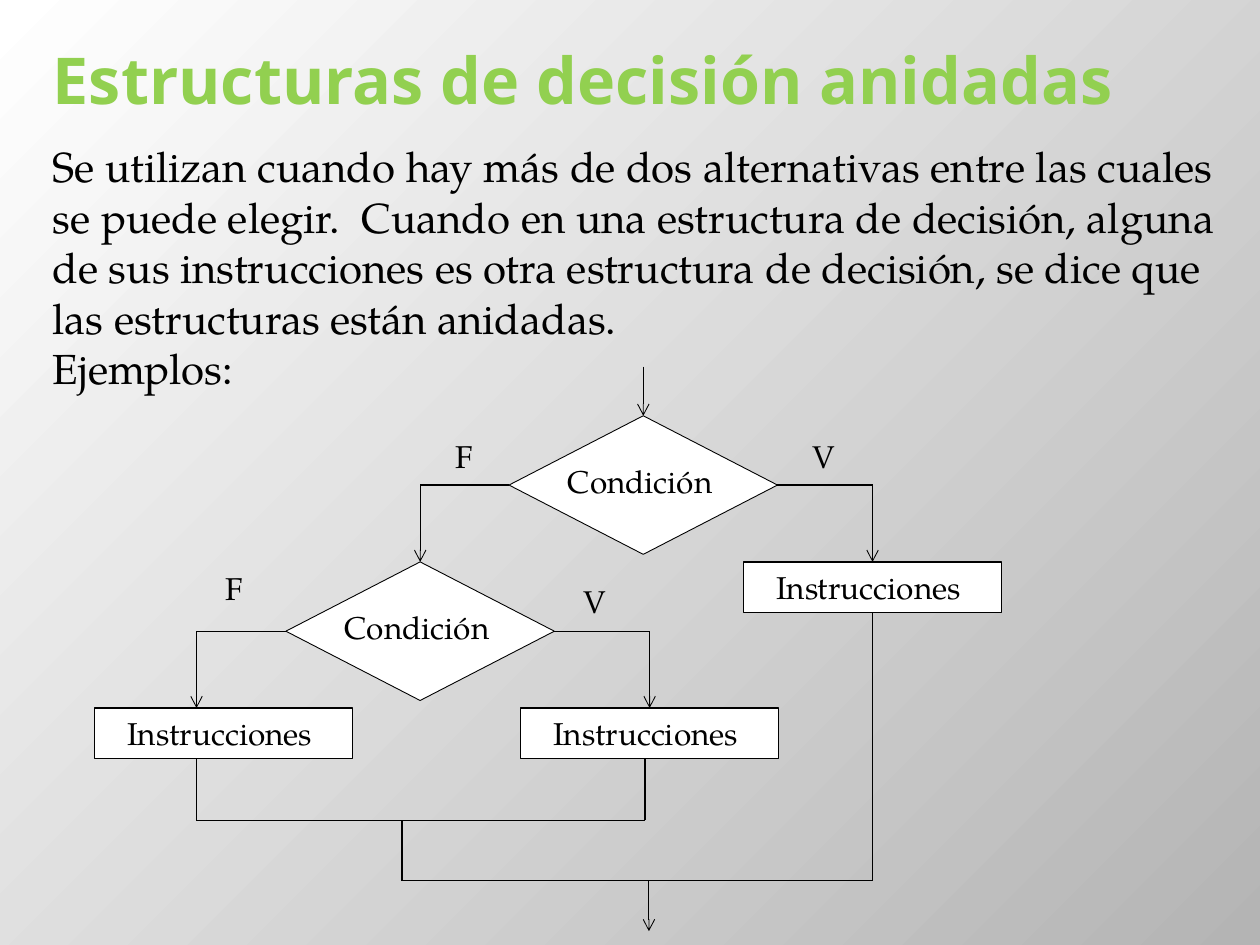
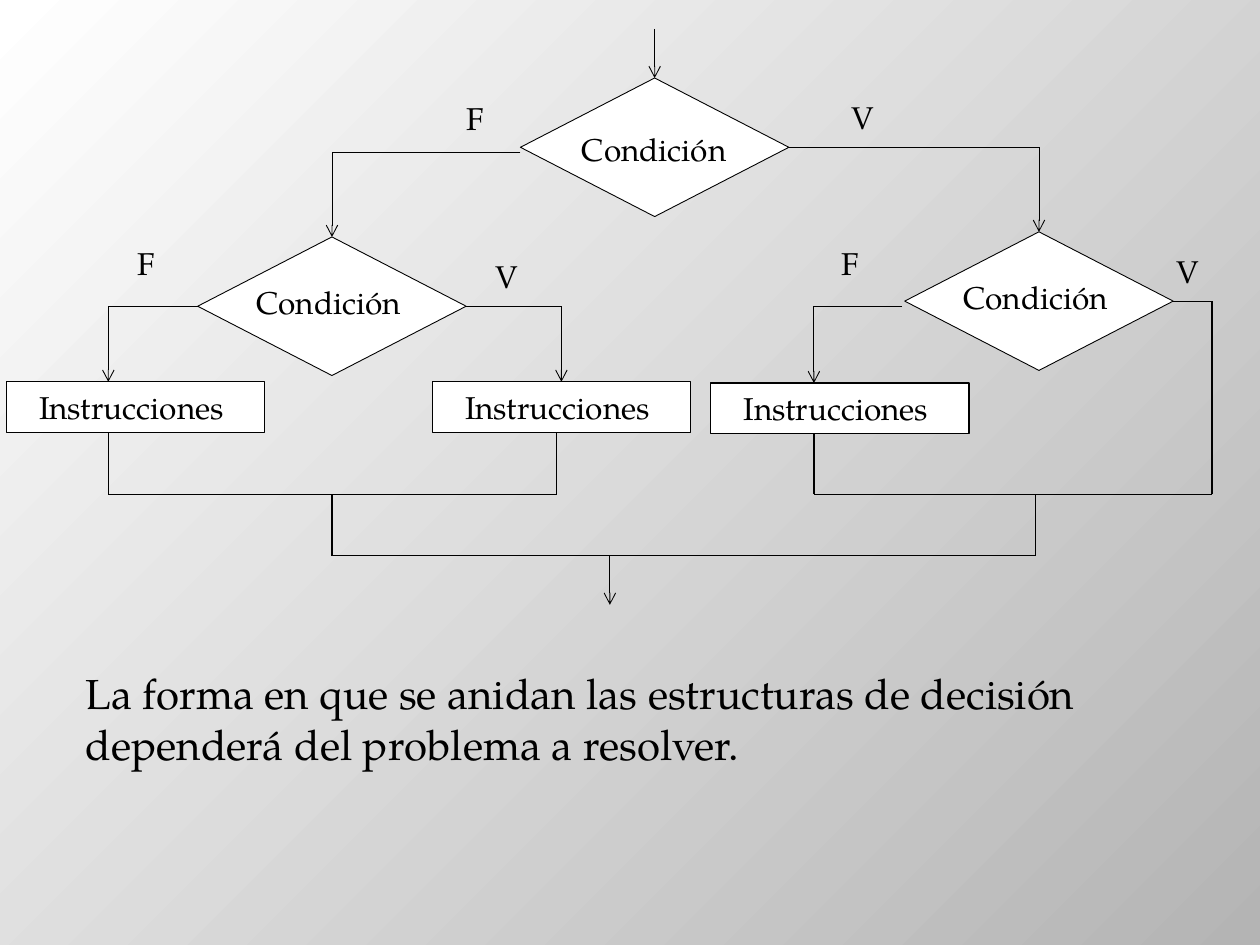
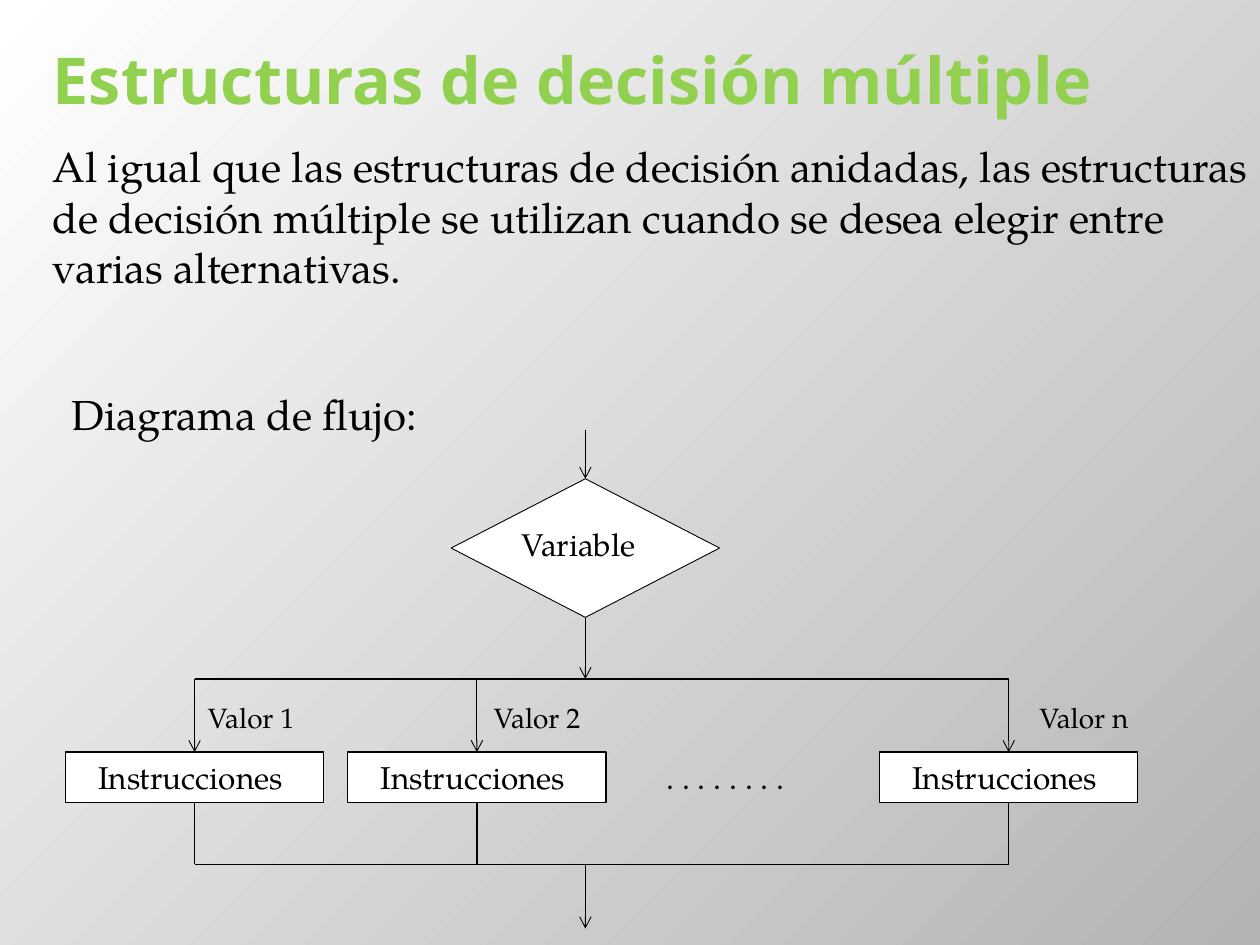
import pptx
import pptx.dml.color
import pptx.enum.shapes
import pptx.enum.text
import pptx.oxml.ns
import pptx.util
from lxml import etree

Pt = pptx.util.Pt
qn = pptx.oxml.ns.qn
RGBColor = pptx.dml.color.RGBColor
SHAPES = pptx.enum.shapes.MSO_SHAPE
ALIGN = pptx.enum.text.PP_ALIGN
ANCHOR = pptx.enum.text.MSO_ANCHOR

BLACK = RGBColor(0x00, 0x00, 0x00)
WHITE = RGBColor(0xFF, 0xFF, 0xFF)
GREY = RGBColor(0xB4, 0xB4, 0xB4)
GREEN = RGBColor(0x92, 0xD0, 0x50)
TITLE_FONT = "Noto Sans"
BODY_FONT = "TeX Gyre Pagella"
THIN, MEDIUM = 0.5, 0.75
TOP, LEFT, BOTTOM, RIGHT = range(4)
DIAMOND_WIDTH, DIAMOND_HEIGHT = 153.4, 79.2
BOX_WIDTH, BOX_HEIGHT = 147.6, 28.8
TITLE_ONLY, BLANK = 5, 6


class FlowDeck:
    def __init__(self):
        self.deck = pptx.Presentation()
        self.deck.slide_width, self.deck.slide_height = Pt(720), Pt(540)
        self.page = None
        self.paint_background()

    def paint_background(self):
        master = self.deck.slide_master
        fill = master.background.fill
        fill.gradient()
        for stop, color in zip(fill.gradient_stops, (WHITE, GREY)):
            stop.color.rgb = color
        linear = master.element.find(f".//{qn('p:bg')}//{qn('a:lin')}")
        radial = etree.Element(qn("a:path"))
        radial.set("path", "circle")
        etree.SubElement(radial, qn("a:fillToRect"), l="0", t="0", r="100000", b="100000")
        linear.getparent().replace(linear, radial)

    def add_page(self, title=None):
        layout = self.deck.slide_layouts[TITLE_ONLY if title else BLANK]
        self.page = self.deck.slides.add_slide(layout)
        if title:
            box = self.page.shapes.title
            box.left, box.top, box.width, box.height = Pt(23), Pt(0), Pt(648), Pt(90)
            box.text_frame.vertical_anchor = ANCHOR.MIDDLE
            self.set_text(box, title, 36.9, TITLE_FONT, GREEN, bold=True)

    def set_text(self, box, text, size, font=BODY_FONT, color=BLACK, bold=False, align=ALIGN.LEFT):
        box.text_frame.word_wrap = True
        box.text_frame.text = text
        for para in box.text_frame.paragraphs:
            para.alignment = align
            for span in para.runs:
                span.font.name = font
                span.font.size = Pt(size)
                span.font.bold = bold
                span.font.color.rgb = color

    def text(self, left, top, width, height, text, size=18):
        box = self.page.shapes.add_textbox(Pt(left), Pt(top), Pt(width), Pt(height))
        self.set_text(box, text, size)

    def branch_label(self, left, top, text):
        self.text(left, top, 27, BOX_HEIGHT, text)

    def outline(self, kind, left, top, width, height, weight):
        shape = self.page.shapes.add_shape(kind, Pt(left), Pt(top), Pt(width), Pt(height))
        shape.shadow.inherit = False
        shape.fill.solid()
        shape.fill.fore_color.rgb = WHITE
        shape.line.color.rgb = BLACK
        shape.line.width = Pt(weight)
        return shape

    def decision(self, left, top, text="Condición", shift=(26.5, 23)):
        diamond = self.outline(SHAPES.DIAMOND, left, top, DIAMOND_WIDTH, DIAMOND_HEIGHT, THIN)
        self.text(left + shift[0], top + shift[1], 124.6, BOX_HEIGHT, text)
        middle = left + DIAMOND_WIDTH / 2
        return diamond, middle

    def entry_decision(self, left, top, **options):
        diamond, middle = self.decision(left, top, **options)
        self.route((middle, top - 28.1), (diamond, TOP), arrow=True)
        return diamond

    def instructions(self, left, top):
        box = self.outline(SHAPES.RECTANGLE, left, top, BOX_WIDTH, BOX_HEIGHT, MEDIUM)
        self.set_text(box, "Instrucciones ", 18, align=ALIGN.CENTER)
        return box

    def route(self, *points, arrow=False):
        last = len(points) - 2
        for index, (start, end) in enumerate(zip(points, points[1:])):
            self.line(start, end, arrow and index == last)

    def line(self, start, end, arrow):
        joined = [not isinstance(point[0], (int, float)) for point in (start, end)]
        ends = [Pt(0) if joint else Pt(value)
                for joint, point in zip(joined, (start, end)) for value in point]
        line = self.page.shapes.add_connector(pptx.enum.shapes.MSO_CONNECTOR.STRAIGHT, *ends)
        if joined[0]:
            line.begin_connect(*start)
        if joined[1]:
            line.end_connect(*end)
        line.line.color.rgb = BLACK
        line.line.width = Pt(THIN if arrow else MEDIUM)
        properties = line.element.spPr
        if arrow:
            etree.SubElement(properties.find(qn("a:ln")), qn("a:tailEnd"), type="arrow")
        etree.SubElement(properties, qn("a:effectLst"))


def nested_example(flow):
    flow.add_page("Estructuras de decisión anidadas")
    flow.text(23, 77, 697, 160.5,
              "Se utilizan cuando hay más de dos alternativas entre las cuales se puede elegir.  "
              "Cuando en una estructura de decisión, alguna de sus instrucciones es otra "
              "estructura de decisión, se dice que las estructuras están anidadas.\nEjemplos:", 24)
    outer = flow.entry_decision(290.9, 237.6)
    inner, inner_x = flow.decision(163.4, 321.1)
    outer_true = flow.instructions(424.8, 321.1)
    inner_true = flow.instructions(297.4, 404.6)
    flow.instructions(54, 404.6)

    flow.route((outer, LEFT), (inner_x, 277.2), (inner, TOP), arrow=True)
    flow.route((outer, RIGHT), (498.6, 277.2), (outer_true, TOP), arrow=True)
    flow.route((inner, LEFT), (112.3, 360.7), (112.3, 404.6), arrow=True)
    flow.route((inner, RIGHT), (371.2, 360.7), (inner_true, TOP), arrow=True)
    flow.route((368.6, 433.4), (368.6, 468.7), (112.3, 468.7), (112.3, 433.4))
    flow.route((229.7, 468.7), (229.7, 503.3), (498.6, 503.3), (outer_true, BOTTOM))
    flow.route((370.8, 503.3), (370.8, 532.1), arrow=True)

    for left, top, text in ((253.4, 246.2, "F"), (457.2, 246.2, "V"),
                            (121.7, 321.8, "F"), (326.2, 329, "V")):
        flow.branch_label(left, top, text)


def two_sided_example(flow):
    flow.add_page()
    flow.text(41.8, 378, 637.2, 73.4,
              "La forma en que se anidan las estructuras de decisión dependerá "
              "del problema a resolver.", 24)
    outer = flow.entry_decision(297.4, 44.6, shift=(28, 26))
    left_inner, left_x = flow.decision(113, 135.4)
    right_inner, right_x = flow.decision(517, 132.5)
    flow.instructions(3.6, 218.2)
    left_true = flow.instructions(247, 218.2)
    flow.instructions(406.1, 218.9)

    flow.route((297.4, 87.1), (left_x, 87.1), (left_inner, TOP), arrow=True)
    flow.route((outer, RIGHT), (right_x, 84.2), (right_inner, TOP), arrow=True)
    flow.route((left_inner, LEFT), (61.9, 175), (61.9, 218.2), arrow=True)
    flow.route((left_inner, RIGHT), (320.8, 175), (left_true, TOP), arrow=True)
    flow.route((515.5, 175), (465.1, 175), (465.1, 218.9), arrow=True)
    flow.route((318.2, 247), (318.2, 282.4), (61.9, 282.4), (61.9, 247))
    flow.route((right_inner, RIGHT), (692.6, 172.1), (692.6, 282.4), (465.1, 282.4), (465.1, 247.7))
    flow.route((left_x, 282.4), (left_x, 317.5), (591.8, 317.5), (591.8, 282.4))
    flow.route((348.5, 317.5), (348.5, 345.6), arrow=True)

    for left, top, text in ((259.2, 53.3, "F"), (479.5, 52.6, "V"),
                            (71.3, 136.1, "F"), (275.8, 143.3, "V"),
                            (473.8, 136.1, "F"), (665.3, 140.4, "V")):
        flow.branch_label(left, top, text)


def multiple_choice(flow):
    flow.add_page("Estructuras de decisión múltiple")
    flow.text(23, 77, 697, 108,
              "Al igual que las estructuras de decisión anidadas, las estructuras de decisión "
              "múltiple se utilizan cuando se desea elegir entre varias alternativas.", 24)
    flow.text(33.8, 218.2, 648, 40, "Diagrama de flujo:", 24)
    variable = flow.entry_decision(257.8, 273.6, text="Variable", shift=(33, 23))
    split, merge = 388, 493.9
    flow.route((variable, BOTTOM), (334.5, split), arrow=True)

    options = ((37.4, 111.6, "Valor 1"), (198.7, 275, "Valor 2"), (502.6, 586.8, "Valor n"))
    centers = [left + BOX_WIDTH / 2 for left, _, _ in options]
    for (left, label_left, label), center in zip(options, centers):
        box = flow.instructions(left, 429.8)
        flow.route((center, split), (box, TOP), arrow=True)
        flow.route((box, BOTTOM), (center, merge))
        flow.text(label_left, 396.5, 78.5, 26.6, label, 16)
    for rail in (split, merge):
        flow.route((centers[0], rail), (centers[-1], rail))
    flow.text(373.7, 429.8, 101.5, BOX_HEIGHT, ". . . . . . . .")
    flow.route((334.5, merge), (334.5, 530.6), arrow=True)


def main():
    flow = FlowDeck()
    nested_example(flow)
    two_sided_example(flow)
    multiple_choice(flow)
    flow.deck.save("out.pptx")


if __name__ == "__main__":
    main()
